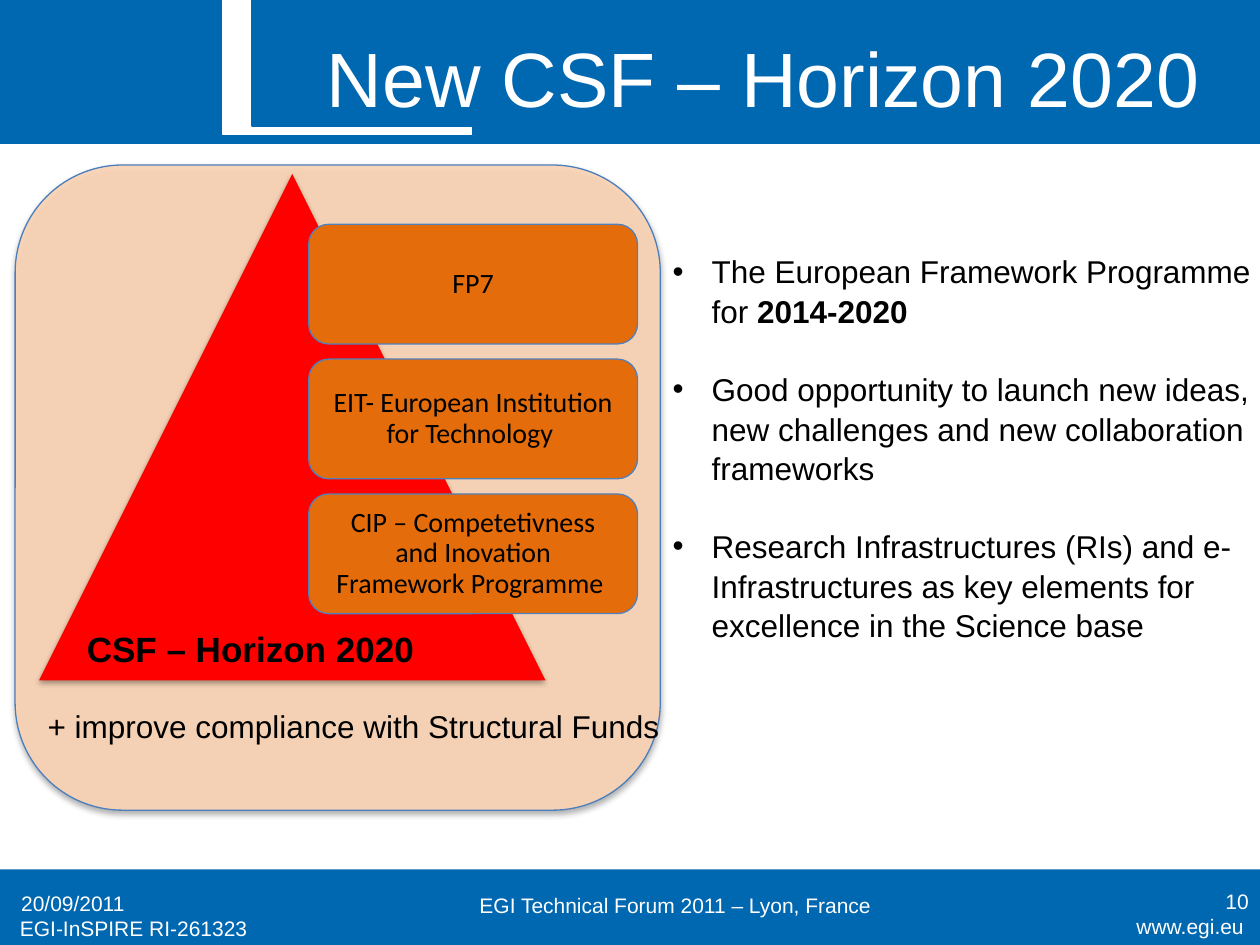
import pptx
import pptx.dml.color
import pptx.enum.shapes
import pptx.enum.text
import pptx.oxml
import pptx.oxml.ns
import pptx.util
from lxml import etree

Inches = pptx.util.Inches
Pt = pptx.util.Pt
RGBColor = pptx.dml.color.RGBColor
SHAPE = pptx.enum.shapes.MSO_SHAPE
ALIGN = pptx.enum.text.PP_ALIGN
ANCHOR = pptx.enum.text.MSO_ANCHOR
qn = pptx.oxml.ns.qn

BLUE = RGBColor(0x00, 0x67, 0xB1)
WHITE = RGBColor(0xFF, 0xFF, 0xFF)
BLACK = RGBColor(0x00, 0x00, 0x00)
PEACH = RGBColor(0xFC, 0xD5, 0xB5)
PANEL_EDGE = RGBColor(0x4B, 0x7E, 0xBC)
RED = RGBColor(0xFF, 0x00, 0x00)
ORANGE = RGBColor(0xE4, 0x6C, 0x0A)
CARD_EDGE = RGBColor(0x4F, 0x81, 0xBD)


def apply(target, values):
    for name, value in values.items():
        setattr(target, name, value)


def bezier(start, control1, control2, end, steps=40):
    """Points along a cubic curve, both ends included."""
    points = []
    for step in range(steps + 1):
        t = step / steps
        weights = ((1 - t) ** 3, 3 * t * (1 - t) ** 2, 3 * t * t * (1 - t), t ** 3)
        points.append(tuple(
            sum(w * c for w, c in zip(weights, coords))
            for coords in zip(start, control1, control2, end)))
    return points


class SlideBuilder:
    """Holds the text style and the slide being built."""

    def __init__(self, slide):
        self.slide = slide
        self.font = {"name": "Arial", "size": Pt(18), "bold": False}
        self.inset = (0.1, 0.05)

    def paint(self, shape, fill, line=None):
        shape.shadow.inherit = False
        shape.fill.solid()
        shape.fill.fore_color.rgb = fill
        if line is None:
            shape.line.fill.background()
        else:
            shape.line.color.rgb = line
            shape.line.width = Pt(0.75)
        return shape

    def block(self, kind, box, fill, line=None):
        shape = self.slide.shapes.add_shape(kind, *map(Inches, box))
        return self.paint(shape, fill, line)

    def outline(self, points, fill, line=None):
        builder = self.slide.shapes.build_freeform(
            *points[0], scale=float(Inches(1)))
        builder.add_line_segments(points[1:], close=True)
        return self.paint(builder.convert_to_shape(), fill, line)

    def drop_shadow(self, shape):
        effects = shape._element.spPr.find(qn("a:effectLst"))
        shadow = etree.SubElement(
            effects, qn("a:outerShdw"), blurRad=str(Pt(3.1)), dist=str(Pt(1.8)),
            dir="5400000", rotWithShape="0")
        black = etree.SubElement(shadow, qn("a:srgbClr"), val="000000")
        etree.SubElement(black, qn("a:alpha"), val="35000")

    def transparency(self, shape, opacity):
        color = shape._element.spPr.find(qn("a:solidFill"))[0]
        etree.SubElement(color, qn("a:alpha"), val=str(opacity * 1000))

    def frame(self, shape, anchor, inset=None):
        across, down = inset or self.inset
        apply(shape.text_frame, {
            "word_wrap": True, "vertical_anchor": anchor,
            "margin_left": Inches(across), "margin_right": Inches(across),
            "margin_top": Inches(down), "margin_bottom": Inches(down)})
        return shape.text_frame

    def run(self, paragraph, text, color=BLACK, **font):
        run = paragraph.add_run()
        run.text = text
        apply(run.font, {**self.font, **font})
        run.font.color.rgb = color

    def text(self, box, text, color=BLACK, align=ALIGN.LEFT,
             anchor=ANCHOR.TOP, **font):
        shape = self.slide.shapes.add_textbox(*map(Inches, box))
        paragraph = self.frame(shape, anchor).paragraphs[0]
        paragraph.alignment = align
        self.run(paragraph, text, color, **font)

    def card(self, box, text):
        shape = self.block(SHAPE.ROUNDED_RECTANGLE, box, ORANGE, CARD_EDGE)
        paragraph = self.frame(shape, ANCHOR.MIDDLE, (0.11, 0.11)).paragraphs[0]
        apply(paragraph, {"alignment": ALIGN.CENTER, "line_spacing": 0.9})
        self.run(paragraph, text, name="Calibri", size=Pt(16))

    def bullets(self, box, items):
        """Each item is a list of (text, bold) parts."""
        shape = self.slide.shapes.add_textbox(*map(Inches, box))
        frame = self.frame(shape, ANCHOR.TOP)
        for index, parts in enumerate(items):
            paragraph = frame.add_paragraph() if index else frame.paragraphs[0]
            properties = paragraph._p.get_or_add_pPr()
            properties.set("marL", str(Inches(0.31)))
            properties.set("indent", str(Inches(-0.31)))
            etree.SubElement(properties, qn("a:buFont"), typeface="Arial")
            etree.SubElement(properties, qn("a:buChar"), char="•")
            paragraph.line_spacing = 1.05
            if index:
                paragraph.space_before = Pt(21.7)
            for text, bold in parts:
                self.run(paragraph, text, bold=bold)


def draw_header(page):
    left, right, bottom = 1.77, 3.74, 1.07
    page.block(SHAPE.RECTANGLE, (0, 0, 10, 1.14), BLUE, BLUE)
    page.block(SHAPE.RECTANGLE, (left, 0, right - left, bottom), WHITE, WHITE)
    sweep = bezier((left, bottom), (2.56, bottom), (left, 0), (2.56, 0))
    page.outline([(right, 0), (right, bottom)] + sweep, BLUE, BLUE)
    page.text((2.32, 0.13, 7.48, 0.95), "New CSF – Horizon 2020", WHITE,
              ALIGN.CENTER, ANCHOR.MIDDLE, size=Pt(44))


def draw_programme(page):
    panel = page.block(SHAPE.ROUNDED_RECTANGLE, (0.12, 1.31, 5.12, 5.12),
                       PEACH, PANEL_EDGE)
    page.transparency(panel, 90)
    page.drop_shadow(panel)
    pyramid = page.block(SHAPE.ISOSCELES_TRIANGLE, (0.31, 1.38, 4.02, 4.02), RED)
    page.drop_shadow(pyramid)
    programmes = (
        "FP7",
        "EIT- European Institution for Technology ",
        "CIP – Competetivness and Inovation Framework Programme ",
    )
    for row, programme in enumerate(programmes):
        page.card((2.45, 1.78 + 1.07 * row, 2.61, 0.95), programme)
    page.text((0.59, 4.93, 3.31, 0.44), "CSF – Horizon 2020",
              size=Pt(20), bold=True)
    page.text((0.28, 5.56, 5.2, 0.4),
              "+ improve compliance with Structural Funds")


def draw_footer(page):
    page.block(SHAPE.RECTANGLE, (0, 6.9, 10, 0.6), BLUE)
    entries = (
        ((8.39, 7.2, 1.58, 0.31), "www.egi.eu", ALIGN.RIGHT, ANCHOR.TOP),
        ((0.06, 7.22, 2.5, 0.31), "EGI-InSPIRE RI-261323", ALIGN.LEFT, ANCHOR.TOP),
        ((0.07, 6.97, 2.33, 0.4), "20/09/2011", ALIGN.LEFT, ANCHOR.MIDDLE),
        ((7.68, 6.95, 2.33, 0.4), "10", ALIGN.RIGHT, ANCHOR.MIDDLE),
        ((3.35, 6.98, 4.02, 0.4), "EGI Technical Forum 2011 – Lyon, France",
         ALIGN.CENTER, ANCHOR.MIDDLE),
    )
    for box, text, align, anchor in entries:
        page.text(box, text, WHITE, align, anchor, size=Pt(12))


def main():
    deck = pptx.Presentation()
    apply(deck, {"slide_width": Inches(10), "slide_height": Inches(7.5)})
    page = SlideBuilder(deck.slides.add_slide(deck.slide_layouts[6]))
    draw_footer(page)
    draw_header(page)
    draw_programme(page)
    page.bullets((5.24, 1.94, 5, 3.13), [
        [("The European Framework Programme for ", False), ("2014-2020", True)],
        [("Good opportunity to launch new ideas, new challenges and new "
          "collaboration frameworks", False)],
        [("Research Infrastructures (RIs) and e-Infrastructures as key "
          "elements for excellence in the Science base", False)],
    ])
    deck.save("out.pptx")


if __name__ == "__main__":
    main()
